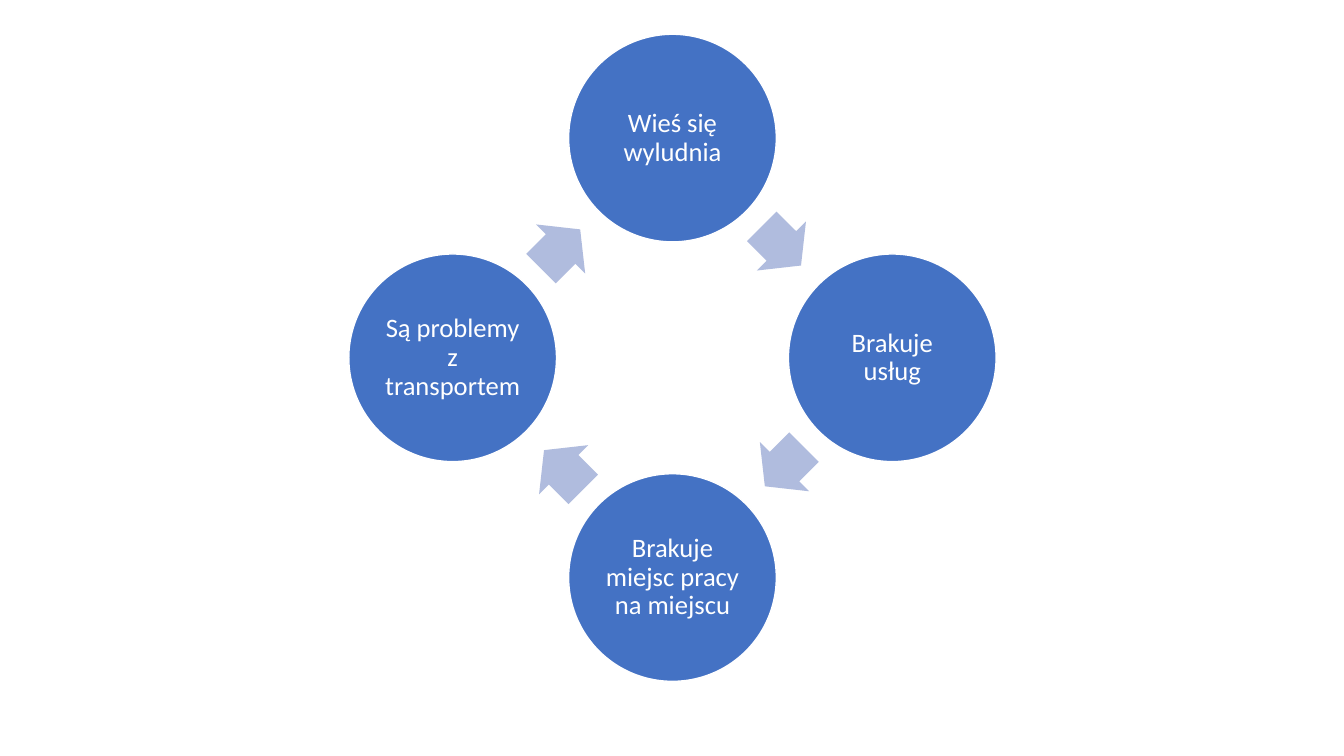
from pptx import Presentation
from pptx.dml.color import RGBColor
from pptx.enum.shapes import MSO_SHAPE as Kind
from pptx.enum.text import MSO_ANCHOR as Anchor, PP_ALIGN as Align
from pptx.util import Inches, Pt


def color(code):
    return RGBColor.from_string(code)


class Cycle:
    font, size = "Calibri", 19
    blue, pale, white = "4472C4", "B0BCDE", "FFFFFF"
    mid_x, mid_y = 6.67, 3.55

    def __init__(self, slide):
        self.slide = slide

    def place(self, kind, point, width, height, fill):
        x, y = point
        left = self.mid_x + x - width / 2
        top = self.mid_y + y - height / 2
        shape = self.slide.shapes.add_shape(
            kind, Inches(left), Inches(top), Inches(width), Inches(height))
        shape.shadow.inherit = False
        shape.fill.solid()
        shape.fill.fore_color.rgb = color(fill)
        return shape

    def circle(self, point, text):
        shape = self.place(Kind.OVAL, point, 2.06, 2.06, self.blue)
        shape.line.color.rgb = color(self.white)
        shape.line.width = Pt(1)
        frame = shape.text_frame
        frame.word_wrap = True
        frame.vertical_anchor = Anchor.MIDDLE
        frame.margin_left = frame.margin_right = Inches(0.03)
        frame.margin_top = frame.margin_bottom = Inches(0.03)
        frame.text = text
        para = frame.paragraphs[0]
        para.alignment = Align.CENTER
        para.line_spacing = 0.9
        font = para.runs[0].font
        font.name = self.font
        font.size = Pt(self.size)
        font.color.rgb = color(self.white)

    def arrow(self, point, angle):
        shape = self.place(Kind.RIGHT_ARROW, point, 0.55, 0.69, self.pale)
        shape.line.fill.background()
        shape.adjustments[0] = 0.6
        shape.adjustments[1] = 0.5
        shape.rotation = angle


def turn(point):
    x, y = point
    return -y, x


def main():
    deck = Presentation()
    deck.slide_width = Inches(13.33)
    deck.slide_height = Inches(7.5)
    cycle = Cycle(deck.slides.add_slide(deck.slide_layouts[6]))

    steps = ["Wieś się wyludnia", "Brakuje usług",
             "Brakuje miejsc pracy na miejscu", "Są problemy z transportem"]
    node, link = (0, -2.18), (1.08, -1.11)
    for index, text in enumerate(steps):
        cycle.circle(node, text)
        cycle.arrow(link, 45 + 90 * index)
        node, link = turn(node), turn(link)

    deck.save("out.pptx")


if __name__ == "__main__":
    main()
